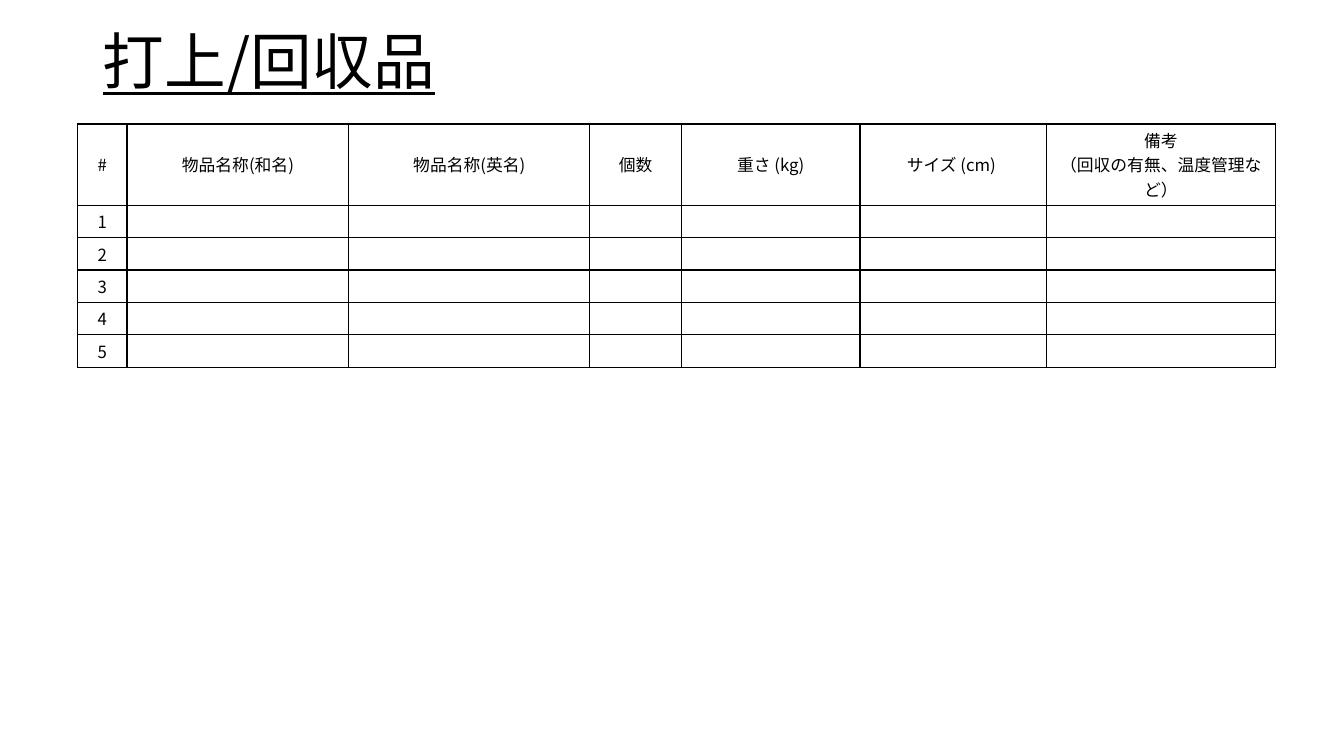
from lxml.etree import SubElement
from pptx import Presentation
from pptx.dml.color import RGBColor
from pptx.enum.text import MSO_ANCHOR, MSO_AUTO_SIZE, PP_ALIGN
from pptx.oxml.ns import qn
from pptx.util import Inches, Pt

COLORS = {"ink": "000000", "paper": "FFFFFF"}
FONT = "Noto Sans CJK JP"
HEADERS = [
    ["#"],
    ["物品名称(和名)"],
    ["物品名称(英名)"],
    ["個数"],
    ["重さ (kg)"],
    ["サイズ (cm) "],
    ["備考", "（回収の有無、温度管理など）"],
]
COLUMN_WIDTHS = [0.49, 2.2, 2.39, 0.91, 1.77, 1.85, 2.27]
ITEM_COUNT = 5
HEADER_HEIGHT = 0.8
ITEM_HEIGHT = 0.32
CELL_MARGIN = 0.04


def add_span(para, text, size, underline=None):
    span = para.add_run()
    span.text = text
    span.font.size = Pt(size)
    span.font.name = FONT
    span.font.underline = underline
    span.font.color.rgb = RGBColor.from_string(COLORS["ink"])
    SubElement(span.font._element, qn("a:ea"), typeface=FONT)


def add_title(page, left, top, width, height):
    title = page.shapes.title
    title.left, title.top = Inches(left), Inches(top)
    title.width, title.height = Inches(width), Inches(height)
    frame = title.text_frame
    frame.auto_size = MSO_AUTO_SIZE.NONE
    frame.vertical_anchor = MSO_ANCHOR.MIDDLE
    para = frame.paragraphs[0]
    para.alignment = PP_ALIGN.LEFT
    para.line_spacing = 0.9
    add_span(para, "打上/回収品", 44, underline=True)


def add_borders(cell):
    properties = cell._tc.get_or_add_tcPr()
    for side in ("lnL", "lnR", "lnT", "lnB"):
        line = SubElement(properties, qn(f"a:{side}"), w=str(Pt(1)))
        fill = SubElement(line, qn("a:solidFill"))
        SubElement(fill, qn("a:srgbClr"), val=COLORS["ink"])


def fill_cell(cell, lines):
    add_borders(cell)
    cell.fill.solid()
    cell.fill.fore_color.rgb = RGBColor.from_string(COLORS["paper"])
    cell.vertical_anchor = MSO_ANCHOR.MIDDLE
    cell.margin_left = cell.margin_right = Inches(CELL_MARGIN)
    cell.margin_top = cell.margin_bottom = Inches(CELL_MARGIN)
    frame = cell.text_frame
    for index, text in enumerate(lines):
        para = frame.add_paragraph() if index else frame.paragraphs[0]
        para.alignment = PP_ALIGN.CENTER
        add_span(para, text, 12)
    if not lines:
        SubElement(frame.paragraphs[0]._p, qn("a:endParaRPr"), sz="1200")


def add_item_table(page, left, top, width, height):
    rows = [HEADERS]
    for number in range(1, ITEM_COUNT + 1):
        rows.append([[str(number)]] + [[]] * (len(HEADERS) - 1))
    frame = page.shapes.add_table(
        len(rows), len(HEADERS), Inches(left), Inches(top), Inches(width), Inches(height)
    )
    table = frame.table
    table.first_row = table.horz_banding = False
    for column, column_width in zip(table.columns, COLUMN_WIDTHS):
        column.width = Inches(column_width)
    for index, row in enumerate(rows):
        table.rows[index].height = Inches(ITEM_HEIGHT if index else HEADER_HEIGHT)
        for cell, lines in zip(table.rows[index].cells, row):
            fill_cell(cell, lines)


def main():
    deck = Presentation()
    deck.slide_width, deck.slide_height = Inches(13.33), Inches(7.5)
    page = deck.slides.add_slide(deck.slide_layouts[5])
    add_title(page, 0.92, 0.15, 11.5, 0.98)
    table_height = HEADER_HEIGHT + ITEM_COUNT * ITEM_HEIGHT
    add_item_table(page, 0.77, 1.23, sum(COLUMN_WIDTHS), table_height)
    deck.save("out.pptx")


if __name__ == "__main__":
    main()
